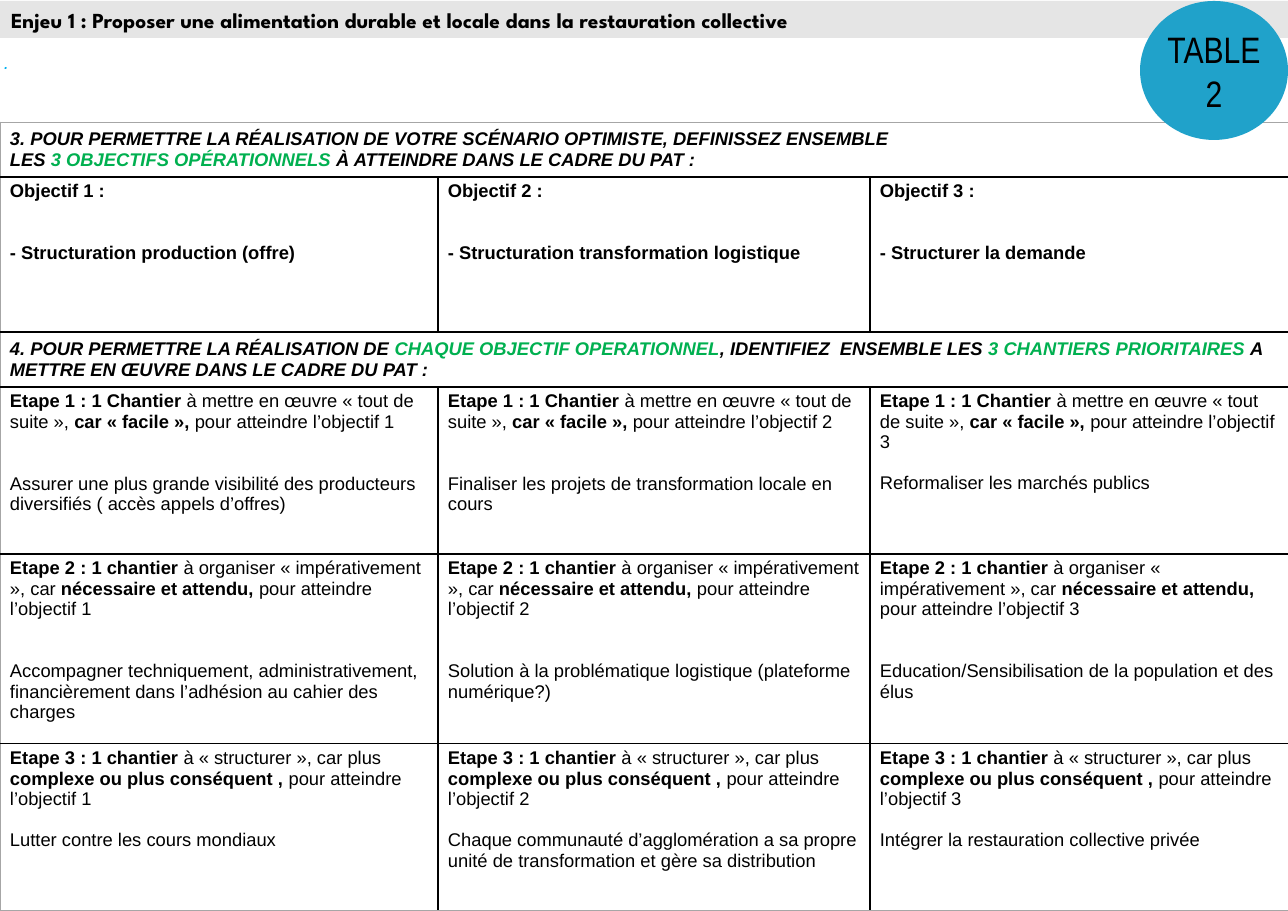
from dataclasses import dataclass
from typing import Optional

import pptx
import pptx.dml.color
import pptx.enum.shapes
import pptx.enum.text
import pptx.oxml
import pptx.oxml.ns
import pptx.util

PX = 8298  # EMU per pixel
PAGE_SIZE = (1288, 911)
TABLE_TOP = 122
COLUMN_WIDTHS = (438, 432, 418)
ROW_HEIGHTS = (55, 155, 55, 167, 190, 167)
INSETS = (10, 4, 10, 4)

ANCHOR = pptx.enum.text.MSO_ANCHOR
ALIGN = pptx.enum.text.PP_ALIGN


@dataclass(frozen=True)
class Theme:
    body_font: str = "Arial"
    title_font: str = "League Spartan"
    badge_font: str = "Arial Narrow"
    body_size: float = 12
    dot_size: float = 12.3
    title_size: float = 14
    badge_size: float = 24
    line_height: float = 13.5
    black: str = "000000"
    white: str = "FFFFFF"
    band: str = "E5E5E5"
    badge: str = "20A2CA"
    dot: str = "00B0F0"
    accent: str = "00B050"
    frame: str = "A6A6A6"


THEME = Theme()


@dataclass(frozen=True)
class Span:
    text: str
    bold: bool = False
    color: Optional[str] = None


@dataclass(frozen=True)
class Para:
    spans: tuple[Span, ...]
    italic: bool = False
    gap_lines: int = 0


@dataclass(frozen=True)
class Step:
    lead: str
    reason: str
    emphasis: str
    answers: tuple[str, str, str]
    gaps: tuple[int, int, int]


def heading(*parts: str) -> Para:
    """Bold italic line whose every second part is accented."""
    spans = (Span(part, True, THEME.accent if index % 2 else None) for index, part in enumerate(parts))
    return Para(tuple(spans), italic=True)


HEADINGS = {
    0: [
        heading("3. POUR PERMETTRE LA RÉALISATION DE VOTRE SCÉNARIO OPTIMISTE, DEFINISSEZ ENSEMBLE"),
        heading("LES ", "3 OBJECTIFS OPÉRATIONNELS ", "À ATTEINDRE DANS LE CADRE DU PAT :"),
    ],
    2: [
        heading("4. POUR PERMETTRE LA RÉALISATION DE ", "CHAQUE OBJECTIF OPERATIONNEL",
                ", IDENTIFIEZ  ENSEMBLE LES ", "3 CHANTIERS PRIORITAIRES ",
                "A METTRE EN ŒUVRE DANS LE CADRE DU PAT :"),
    ],
}
OBJECTIVES = (
    "- Structuration production (offre)",
    "- Structuration transformation logistique",
    "- Structurer la demande",
)
STEPS = (
    Step("Etape 1 : 1 Chantier ", "à mettre en œuvre « tout de suite »,", " car « facile », ",
         ("Assurer une plus grande visibilité des producteurs diversifiés ( accès appels d’offres)",
          "Finaliser les projets de transformation locale en cours",
          "Reformaliser les marchés publics"), (2, 2, 1)),
    Step("Etape 2 : 1 chantier ", "à organiser « impérativement », car ", "nécessaire et attendu, ",
         ("Accompagner techniquement, administrativement, financièrement dans l’adhésion au cahier des charges",
          "Solution à la problématique logistique (plateforme numérique?)",
          "Education/Sensibilisation de la population et des élus"), (2, 2, 2)),
    Step("Etape 3 : 1 chantier ", "à « structurer », car plus ", "complexe ou plus conséquent , ",
         ("Lutter contre les cours mondiaux",
          "Chaque communauté d’agglomération a sa propre unité de transformation et gère sa distribution",
          "Intégrer la restauration collective privée"), (1, 1, 1)),
)


def rgb(color: str) -> pptx.dml.color.RGBColor:
    return pptx.dml.color.RGBColor.from_string(color)


def fill_solid(target, color: str) -> None:
    target.fill.solid()
    target.fill.fore_color.rgb = rgb(color)


def set_font(font, name: str, size: float, color: str) -> None:
    font.name = name
    font.size = pptx.util.Pt(size)
    font.color.rgb = rgb(color)


def set_insets(target, insets: tuple[int, int, int, int]) -> None:
    for side, inset in zip(("left", "top", "right", "bottom"), insets):
        setattr(target, f"margin_{side}", inset * PX)


def place(shape, left: int, top: int, width: int, height: int) -> None:
    shape.left, shape.top = left * PX, top * PX
    shape.width, shape.height = width * PX, height * PX


def write_line(shape, text: str, name: str, size: float, color: str, align: ALIGN):
    para = shape.text_frame.paragraphs[0]
    para.text = text
    para.alignment = align
    set_font(para.font, name, size, color)
    return para


def write_cell(cell, paras: list[Para]) -> None:
    frame = cell.text_frame
    for index, content in enumerate(paras):
        para = frame.add_paragraph() if index else frame.paragraphs[0]
        if content.gap_lines:
            para.space_before = pptx.util.Pt(content.gap_lines * THEME.line_height)
        set_font(para.font, THEME.body_font, THEME.body_size, THEME.black)
        para.font.italic = content.italic
        for span in content.spans:
            run = para.add_run()
            run.text = span.text
            run.font.bold = span.bold
            if span.color:
                run.font.color.rgb = rgb(span.color)


def set_borders(cell, row: int, column: int) -> None:
    """Black rules inside the table, a thin grey frame around it."""
    outer = {"L": column == 0, "R": column == len(COLUMN_WIDTHS) - 1 or cell.is_merge_origin,
             "T": row == 0, "B": row == len(ROW_HEIGHTS) - 1}
    properties = cell._tc.get_or_add_tcPr()
    for index, (side, is_outer) in enumerate(outer.items()):
        color, width = (THEME.frame, 6350) if is_outer else (THEME.black, 12700)
        properties.insert(index, pptx.oxml.parse_xml(
            f'<a:ln{side} {pptx.oxml.ns.nsdecls("a")} w="{width}"><a:solidFill>'
            f'<a:srgbClr val="{color}"/></a:solidFill></a:ln{side}>'))


def cell_paras(row: int, column: int) -> list[Para]:
    if row == 1:
        return [Para((Span(f"Objectif {column + 1} :", True),)),
                Para((Span(OBJECTIVES[column], True),), gap_lines=2)]
    step = STEPS[row - 3]
    task = (Span(step.lead, True), Span(step.reason), Span(step.emphasis, True),
            Span(f"pour atteindre l’objectif {column + 1}"))
    return [Para(task), Para((Span(step.answers[column]),), gap_lines=step.gaps[column])]


def add_objectives_table(page) -> None:
    table = page.shapes.add_table(
        len(ROW_HEIGHTS), len(COLUMN_WIDTHS), 0, TABLE_TOP * PX,
        sum(COLUMN_WIDTHS) * PX, sum(ROW_HEIGHTS) * PX).table
    table.first_row = table.horz_banding = False
    for column, width in zip(table.columns, COLUMN_WIDTHS):
        column.width = width * PX
    for row, height in zip(table.rows, ROW_HEIGHTS):
        row.height = height * PX
    for row in HEADINGS:
        table.cell(row, 0).merge(table.cell(row, len(COLUMN_WIDTHS) - 1))
    for row in range(len(ROW_HEIGHTS)):
        for column in range(len(COLUMN_WIDTHS)):
            cell = table.cell(row, column)
            fill_solid(cell, THEME.white)
            set_insets(cell, INSETS)
            set_borders(cell, row, column)
            if cell.is_spanned:
                continue
            cell.vertical_anchor = ANCHOR.MIDDLE if row in HEADINGS else ANCHOR.TOP
            write_cell(cell, HEADINGS[row] if row in HEADINGS else cell_paras(row, column))


def add_title(page) -> None:
    title = page.shapes.title
    place(title, 0, 1, PAGE_SIZE[0], 37)
    fill_solid(title, THEME.band)
    title.text_frame.auto_size = pptx.enum.text.MSO_AUTO_SIZE.NONE
    title.text_frame.vertical_anchor = ANCHOR.MIDDLE
    set_insets(title.text_frame, (11, 0, 11, 0))
    para = write_line(title, "Enjeu 1 : Proposer une alimentation durable et locale dans la restauration collective",
                      THEME.title_font, THEME.title_size, THEME.black, ALIGN.LEFT)
    para.font.bold = True


def add_dot(page) -> None:
    box = page.shapes.add_textbox(0, 51 * PX, 40 * PX, 24 * PX)
    set_insets(box.text_frame, (4, 0, 4, 0))
    para = write_line(box, ".", THEME.body_font, THEME.dot_size, THEME.dot, ALIGN.LEFT)
    para.font.italic = True


def add_badge(page) -> None:
    badge = page.shapes.add_shape(
        pptx.enum.shapes.MSO_SHAPE.OVAL, 1140 * PX, PX, 148 * PX, 139 * PX)
    badge.shadow.inherit = False
    fill_solid(badge, THEME.badge)
    badge.line.fill.background()
    badge.text_frame.word_wrap = True
    badge.text_frame.vertical_anchor = ANCHOR.MIDDLE
    set_insets(badge.text_frame, (4, 4, 4, 4))
    write_line(badge, "TABLE 2", THEME.badge_font, THEME.badge_size, THEME.black, ALIGN.CENTER)


def main() -> None:
    deck = pptx.Presentation()
    deck.slide_width, deck.slide_height = (length * PX for length in PAGE_SIZE)
    page = deck.slides.add_slide(deck.slide_layouts[5])
    add_title(page)
    add_dot(page)
    add_objectives_table(page)
    add_badge(page)
    deck.save("out.pptx")


if __name__ == "__main__":
    main()
